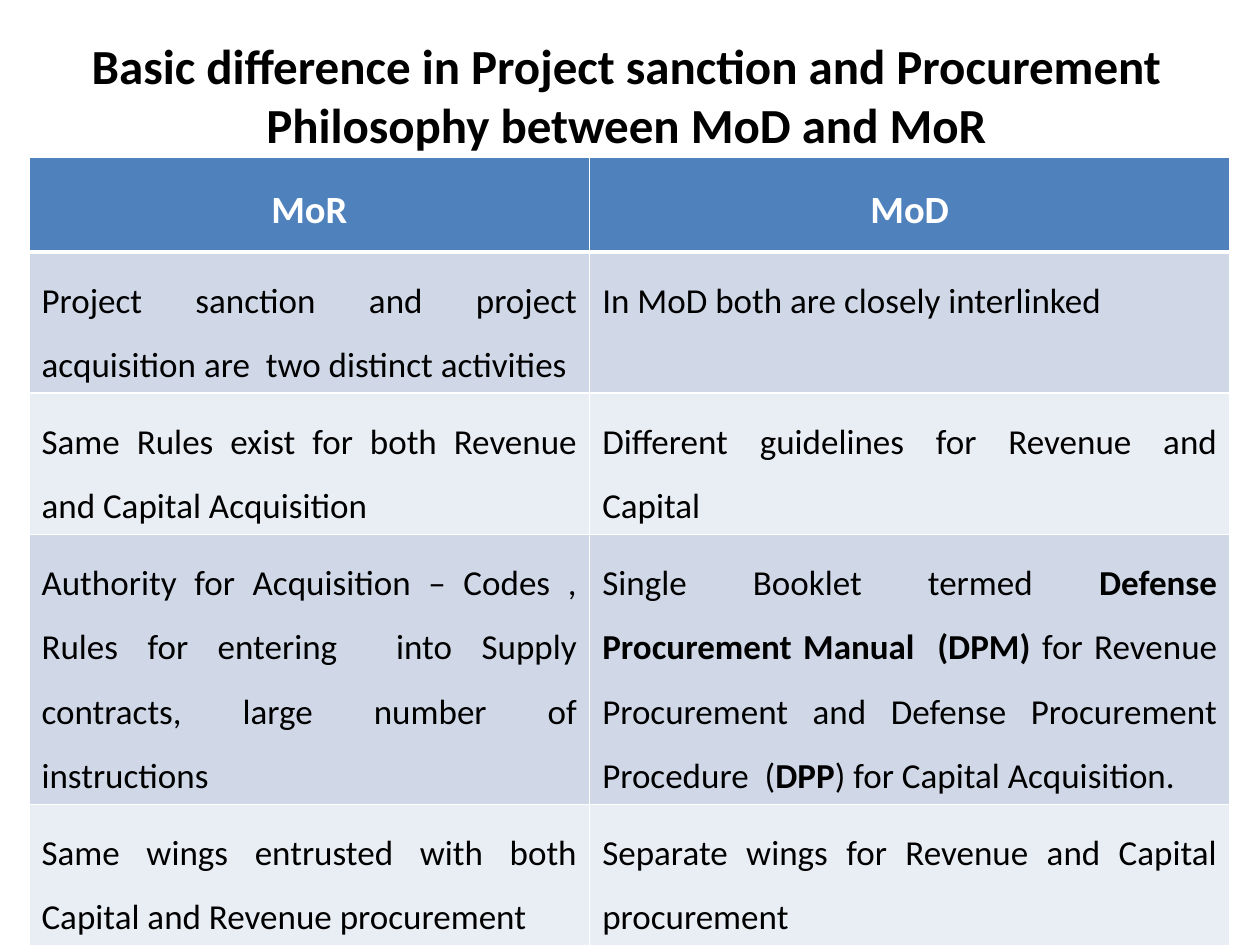
from lxml.etree import SubElement
from pptx import Presentation
from pptx.dml.color import RGBColor
from pptx.enum.text import MSO_ANCHOR, PP_ALIGN
from pptx.oxml.ns import qn
from pptx.util import Inches, Pt

TITLE = "Basic difference in Project sanction and Procurement Philosophy between MoD and MoR"
HEADERS = ["MoR", "MoD"]
ROWS = [
    [[("Project sanction and project acquisition are  two distinct activities", False)],
     [("In MoD both are closely interlinked", False)]],
    [[("Same Rules exist for both Revenue and Capital Acquisition", False)],
     [("Different guidelines for Revenue and Capital", False)]],
    [[("Authority for Acquisition – Codes , Rules for entering  into Supply contracts, "
       "large number of instructions", False)],
     [("Single Booklet termed ", False),
      ("Defense Procurement Manual  (DPM) ", True),
      ("for Revenue Procurement and Defense Procurement Procedure  (", False),
      ("DPP", True),
      (") for Capital Acquisition. ", False)]],
    [[("Same wings entrusted with both Capital and Revenue procurement", False)],
     [("Separate wings for Revenue and Capital procurement", False)]],
]


def rgb(value):
    return RGBColor.from_string(value)


class Deck:
    """Holds the style and the current slide, and adds each kind of element."""

    font = "Calibri"
    black, white = "000000", "FFFFFF"
    header_fill = "4F81BD"
    band_fills = ["D0D8E8", "E9EDF4"]

    def __init__(self, width, height):
        self.prs = Presentation()
        self.prs.slide_width = Inches(width)
        self.prs.slide_height = Inches(height)
        self.s = self.prs.slides.add_slide(self.prs.slide_layouts[5])

    def runs(self, p, runs, size, color, align):
        p.alignment = align
        for text, bold in runs:
            r = p.add_run()
            r.text = text
            r.font.name = self.font
            r.font.size = Pt(size)
            r.font.bold = bold
            r.font.color.rgb = rgb(color)

    def title(self, text, left, top, width, height):
        sp = self.s.shapes.title
        sp.left, sp.top = Inches(left), Inches(top)
        sp.width, sp.height = Inches(width), Inches(height)
        tf = sp.text_frame
        tf.word_wrap = True
        tf.vertical_anchor = MSO_ANCHOR.MIDDLE
        self.runs(tf.paragraphs[0], [(text, True)], 28, self.black, PP_ALIGN.CENTER)

    def borders(self, cell, bottom):
        tc_pr = cell._tc.get_or_add_tcPr()
        for side, width in (("L", 1), ("R", 1), ("T", 1), ("B", bottom)):
            ln = SubElement(tc_pr, qn(f"a:ln{side}"), w=str(Pt(width)))
            fill = SubElement(ln, qn("a:solidFill"))
            SubElement(fill, qn("a:srgbClr"), val=self.white)

    def cell(self, cell, runs, fill, size, color, align, bottom=1):
        self.borders(cell, bottom)
        cell.fill.solid()
        cell.fill.fore_color.rgb = rgb(fill)
        p = cell.text_frame.paragraphs[0]
        p.line_spacing = 1.5
        self.runs(p, runs, size, color, align)

    def table(self, headers, rows, left, top, widths, row_height):
        count = len(rows) + 1
        table = self.s.shapes.add_table(
            count, len(headers), Inches(left), Inches(top),
            Inches(sum(widths)), Inches(row_height * count)).table
        for column, width in zip(table.columns, widths):
            column.width = Inches(width)
        for j, text in enumerate(headers):
            self.cell(table.cell(0, j), [(text, True)], self.header_fill,
                      22, self.white, PP_ALIGN.CENTER, bottom=3)
        for i, row in enumerate(rows):
            for j, runs in enumerate(row):
                self.cell(table.cell(i + 1, j), runs, self.band_fills[i % 2],
                          20, self.black, PP_ALIGN.JUSTIFY)


def main():
    deck = Deck(10, 7.5)
    deck.title(TITLE, 0.47, 0, 9, 1.5)
    deck.table(HEADERS, ROWS, 0.23, 1.25, [4.45, 5.08], 0.75)
    deck.prs.save("out.pptx")


if __name__ == "__main__":
    main()
